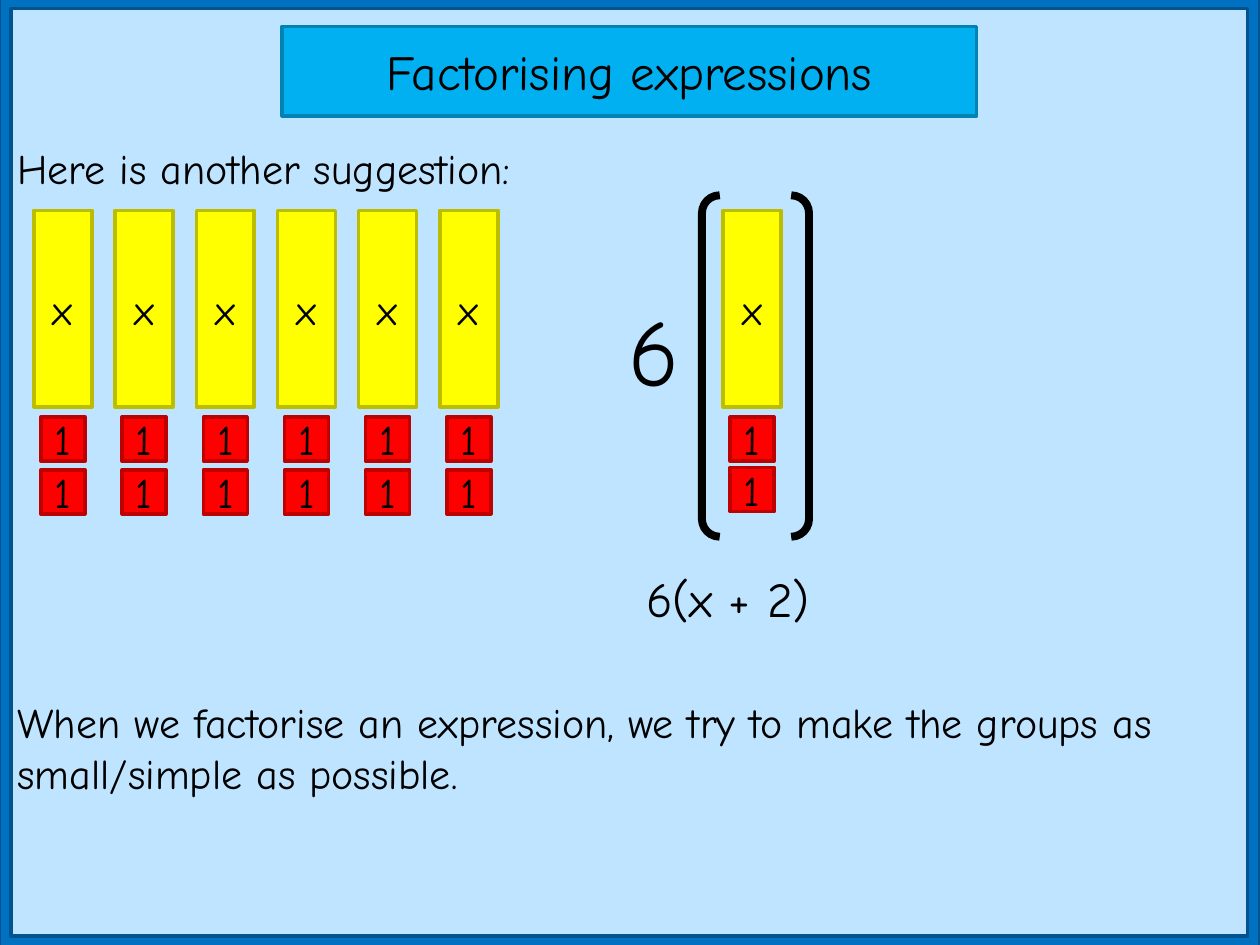
from pptx import Presentation
from pptx.dml.color import RGBColor
from pptx.enum.shapes import MSO_SHAPE
from pptx.enum.text import MSO_ANCHOR, PP_ALIGN
from pptx.util import Pt

FONT = "Comic Neue"
BLACK = "000000"
COLUMN_PITCH = 46.4
TILE_WIDTH, TILE_HEIGHT = 33.1, 112.3
UNIT_SIZE = 25.2
UNITS_TOP = 118.1


def color(hex_code):
    return RGBColor.from_string(hex_code)


def style_paragraph(paragraph, text, size):
    paragraph.text = text
    paragraph.font.name = FONT
    paragraph.font.size = Pt(size)
    paragraph.font.color.rgb = color(BLACK)


def add_figure(slide, kind, box, fill, line, line_width=2):
    figure = slide.shapes.add_shape(kind, *map(Pt, box))
    figure.shadow.inherit = False
    if fill:
        figure.fill.solid()
        figure.fill.fore_color.rgb = color(fill)
    else:
        figure.fill.background()
    figure.line.color.rgb = color(line)
    figure.line.width = Pt(line_width)
    return figure


def add_label_box(slide, box, text, size, fill, line):
    label_box = add_figure(slide, MSO_SHAPE.RECTANGLE, box, fill, line)
    frame = label_box.text_frame
    frame.vertical_anchor = MSO_ANCHOR.MIDDLE
    frame.paragraphs[0].alignment = PP_ALIGN.CENTER
    style_paragraph(frame.paragraphs[0], text, size)


def add_text(slide, box, lines, size, gap=0):
    frame = slide.shapes.add_textbox(*map(Pt, box)).text_frame
    frame.word_wrap = True
    for i, line in enumerate(lines):
        paragraph = frame.add_paragraph() if i else frame.paragraphs[0]
        style_paragraph(paragraph, line, size)
        if i:
            paragraph.space_before = Pt(gap)


def add_group(slide, left, top, unit_pitch):
    """Place one x tile with two unit tiles centred below it."""
    add_label_box(slide, (left, top, TILE_WIDTH, TILE_HEIGHT),
                  "x", 24, "FFFF00", "BDBD00")
    unit_left = left + (TILE_WIDTH - UNIT_SIZE) / 2
    for row in range(2):
        unit_top = top + UNITS_TOP + row * unit_pitch
        add_label_box(slide, (unit_left, unit_top, UNIT_SIZE, UNIT_SIZE),
                      "1", 24, "FF0000", "BD0000")


def add_six_groups(slide, left, top):
    for column in range(6):
        add_group(slide, left + column * COLUMN_PITCH, top, unit_pitch=30.2)


def add_factorised_form(slide, left, top):
    """Place 6 times a bracketed group, with the expression below."""
    add_text(slide, (left, top + 51.8, 57.6, 72.7), ["6"], 54)
    add_figure(slide, MSO_SHAPE.DOUBLE_BRACKET, (left + 49, top, 61.2, 195.1),
               None, BLACK, 4.5)
    add_group(slide, left + 61.2, top + 8.6, unit_pitch=28.8)
    add_text(slide, (left + 10, top + 209.5, 139.7, 41), ["6(x + 2)"], 28)


def add_border(slide, box):
    border = add_figure(slide, MSO_SHAPE.FRAME, box, "0070C0", "00538E")
    border.adjustments[0] = 0.013


def main():
    presentation = Presentation()
    presentation.slide_width, presentation.slide_height = Pt(720), Pt(540)
    slide = presentation.slides.add_slide(presentation.slide_layouts[6])
    slide.background.fill.solid()
    slide.background.fill.fore_color.rgb = color("BFE4FF")

    add_border(slide, (-0.7, -2.2, 720.7, 544.3))
    add_text(slide, (2.9, 77.8, 708.5, 385.2),
             ["Here is another suggestion:",
              "When we factorise an expression, we try to make the groups "
              "as small/simple as possible."], 24, gap=288)
    add_label_box(slide, (161.3, 15.1, 396.7, 51.1),
                  "Factorising expressions", 28, "00B0F0", "0082B2")
    add_six_groups(slide, 19.4, 120.2)
    add_factorised_form(slide, 352.1, 111.6)
    presentation.save("out.pptx")


if __name__ == "__main__":
    main()
